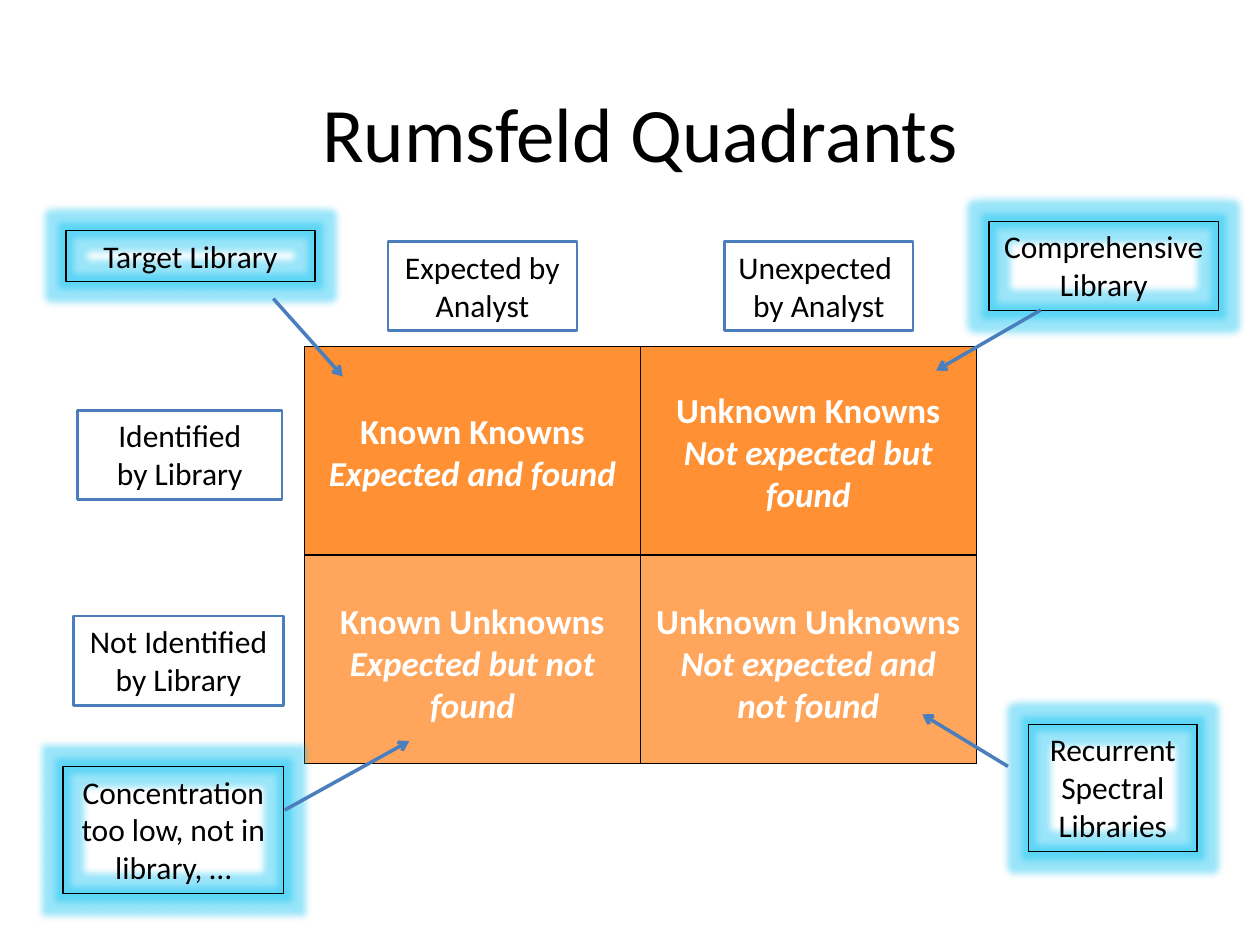
from itertools import product

from lxml.etree import SubElement
from pptx import Presentation
from pptx.dml.color import RGBColor
from pptx.enum.shapes import MSO_CONNECTOR, MSO_SHAPE
from pptx.enum.text import MSO_ANCHOR, MSO_AUTO_SIZE, PP_ALIGN
from pptx.oxml import parse_xml
from pptx.oxml.ns import nsdecls, qn
from pptx.util import Cm, Pt

THEME = {
    "font": "Calibri",
    "title_size": Pt(44), "quadrant_size": Pt(20), "box_size": Pt(18),
    "text": RGBColor.from_string("000000"),
    "quadrant_text": RGBColor.from_string("FFFFFF"),
    "accent": RGBColor.from_string("4B7EBC"),
    "rows": [RGBColor.from_string("FF9033"), RGBColor.from_string("FFA65C")],
    "border": "000000", "glow": "00BFF2",
}


def write(frame, text, size, color, bold=None):
    """Fill a text frame with centred lines in the theme font."""
    frame.word_wrap = True
    frame.text = text
    for paragraph in frame.paragraphs:
        paragraph.alignment = PP_ALIGN.CENTER
        paragraph.font.name = THEME["font"]
        paragraph.font.size = size
        paragraph.font.color.rgb = color
        paragraph.font.bold = bold


def add_box(text, left, top, width, height, line_color, line_width):
    """Add an unfilled, outlined text rectangle."""
    box = slide.shapes.add_shape(MSO_SHAPE.RECTANGLE, Cm(left), Cm(top), Cm(width), Cm(height))
    box.shadow.inherit = False
    box.fill.background()
    box.line.color.rgb = line_color
    box.line.width = line_width
    write(box.text_frame, text, THEME["box_size"], THEME["text"])
    box.text_frame.vertical_anchor = MSO_ANCHOR.TOP
    box.text_frame.auto_size = MSO_AUTO_SIZE.SHAPE_TO_FIT_TEXT
    return box


prs = Presentation()
prs.slide_width, prs.slide_height = Cm(25.4), Cm(19.05)
slide = prs.slides.add_slide(prs.slide_layouts[5])

# Title
title = slide.shapes.title
title.left, title.top, title.width, title.height = Cm(1.48), Cm(1.06), Cm(22.86), Cm(3.18)
write(title.text_frame, "Rumsfeld Quadrants", THEME["title_size"], THEME["text"])
title.text_frame.vertical_anchor = MSO_ANCHOR.MIDDLE

# Column and row headings
for heading in [
    ("Expected by Analyst", 7.82, 4.87, 3.81, 1.8),
    ("Unexpected \nby Analyst", 14.6, 4.87, 3.81, 1.8),
    ("Identified\nby Library", 1.56, 8.27, 4.13, 1.8),
    ("Not Identified\nby Library", 1.48, 12.42, 4.24, 1.8),
]:
    add_box(*heading, THEME["accent"], Pt(1.5))

# Quadrant grid
grid_left, grid_top, column_width, row_height = 6.14, 6.99, 6.77, 4.2
grid = slide.shapes.add_table(2, 2, Cm(grid_left), Cm(grid_top),
                              Cm(2 * column_width), Cm(2 * row_height)).table
for row, column in product(range(2), repeat=2):
    cell = grid.cell(row, column)
    properties = cell._tc.get_or_add_tcPr()
    for side in ("lnL", "lnR", "lnT", "lnB"):
        properties.append(parse_xml(
            f'<a:{side} {nsdecls("a")} w="12700"><a:solidFill>'
            f'<a:srgbClr val="{THEME["border"]}"/></a:solidFill></a:{side}>'))
    cell.fill.solid()
    cell.fill.fore_color.rgb = THEME["rows"][row]

# Quadrant labels
label_height = 4.24
quadrants = [
    "Known Knowns\nExpected and found", "Unknown Knowns\nNot expected but found",
    "Known Unknowns\nExpected but not found", "Unknown Unknowns\nNot expected and not found",
]
for (row, column), text in zip(product(range(2), repeat=2), quadrants):
    label = slide.shapes.add_textbox(
        Cm(grid_left + column * column_width), Cm(grid_top + row * label_height),
        Cm(column_width), Cm(label_height)).text_frame
    write(label, text, THEME["quadrant_size"], THEME["quadrant_text"], bold=True)
    label.vertical_anchor = MSO_ANCHOR.MIDDLE
    label.paragraphs[1].font.italic = True

# Glowing notes
for note in [
    ("Recurrent Spectral Libraries", 20.74, 14.6, 3.39, 2.57),
    ("Concentration too low, not in library, …", 1.27, 15.45, 4.45, 2.57),
    ("Comprehensive Library", 19.94, 4.46, 4.62, 1.8),
    ("Target Library", 1.33, 4.65, 5.02, 1.02),
]:
    note_box = add_box(*note, THEME["text"], Pt(0.75))
    effects = note_box._element.spPr.find(qn("a:effectLst"))
    effects.append(parse_xml(
        f'<a:glow {nsdecls("a")} rad="101600"><a:srgbClr val="{THEME["glow"]}">'
        '<a:alpha val="40000"/></a:srgbClr></a:glow>'))

# Arrows from notes to quadrants
for start_x, start_y, end_x, end_y in [
    (5.74, 16.33, 8.25, 14.94),
    (20.32, 15.45, 18.59, 14.4),
    (20.98, 6.25, 18.87, 7.47),
    (5.51, 6.02, 6.91, 7.59),
]:
    arrow = slide.shapes.add_connector(
        MSO_CONNECTOR.STRAIGHT, Cm(start_x), Cm(start_y), Cm(end_x), Cm(end_y))
    arrow.line.color.rgb = THEME["accent"]
    arrow.line.width = Pt(2)
    SubElement(arrow.line._get_or_add_ln(), qn("a:tailEnd"), type="arrow")
    SubElement(arrow._element.spPr, qn("a:effectLst"))

prs.save("out.pptx")
